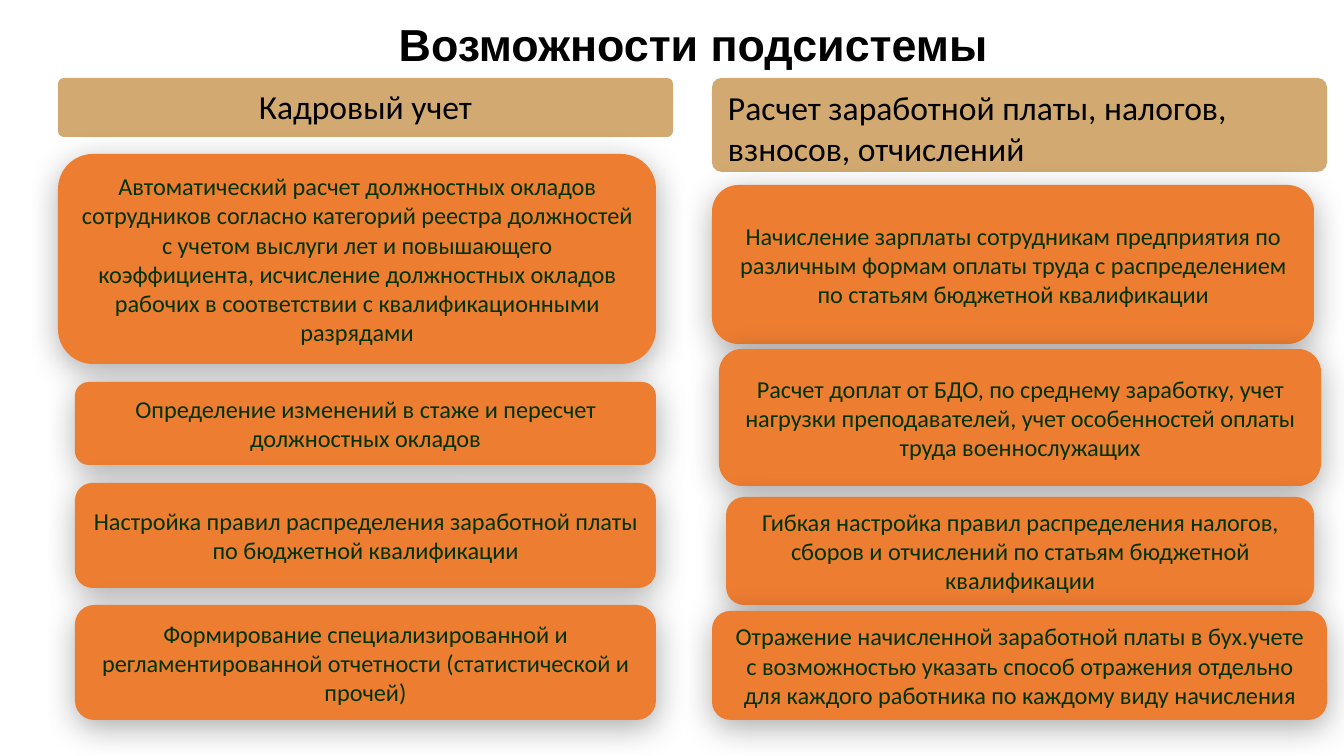
from lxml import etree
from pptx import Presentation
from pptx import util as u
from pptx.dml.color import RGBColor
from pptx.enum import shapes, text
from pptx.oxml.ns import qn

PX = u.Inches(10) / 1344
BLACK = RGBColor(0x00, 0x00, 0x00)
SAND = RGBColor(0xD2, 0xAA, 0x71)
ORANGE = RGBColor(0xED, 0x7D, 0x31)
DARK_GREEN = RGBColor(0x00, 0x33, 0x00)

HEADER_TOP, HEADER_WIDTH = 78, 615
HEADERS = [
    (58, 59, text.PP_ALIGN.CENTER, "Кадровый учет"),
    (712, 94, text.PP_ALIGN.LEFT,
     "Расчет заработной платы, налогов, взносов, отчислений"),
]
FEATURES = [
    (58, 154, 598, 210,
     "Автоматический расчет должностных окладов сотрудников согласно "
     "категорий реестра должностей с учетом выслуги лет и повышающего\v"
     "коэффициента, исчисление должностных окладов рабочих в соответствии "
     "с квалификационными разрядами"),
    (75, 382, 581, 83,
     "Определение изменений в стаже и пересчет должностных окладов"),
    (75, 483, 581, 105,
     "Настройка правил распределения заработной платы по бюджетной "
     "квалификации"),
    (75, 605, 581, 115,
     "Формирование специализированной и регламентированной отчетности "
     "(статистической и прочей)"),
    (712, 185, 602, 159,
     "Начисление зарплаты сотрудникам предприятия по различным формам "
     "оплаты труда с распределением по статьям бюджетной квалификации"),
    (719, 349, 602, 137,
     "Расчет доплат от БДО, по среднему заработку, учет нагрузки "
     "преподавателей, учет особенностей оплаты труда военнослужащих"),
    (726, 497, 588, 108,
     "Гибкая настройка правил распределения налогов, сборов и отчислений "
     "по статьям бюджетной квалификации"),
    (712, 611, 615, 109,
     "Отражение начисленной заработной платы в бух.учете с возможностью "
     "указать способ отражения отдельно для каждого работника по каждому "
     "виду начисления"),
]


def px(*lengths):
    """Turn pixel lengths into EMU."""
    return [round(length * PX) for length in lengths]


def write(shape, wording, size, color, align, anchor, font="Calibri", bold=False):
    """Put one formatted paragraph into a shape."""
    frame = shape.text_frame
    frame.text = wording
    frame.word_wrap = True
    frame.auto_size = text.MSO_AUTO_SIZE.NONE
    frame.vertical_anchor = anchor
    paragraph = frame.paragraphs[0]
    paragraph.alignment = align
    for run in paragraph.runs:
        run.font.name = font
        run.font.size = u.Pt(size)
        run.font.bold = bold
        run.font.color.rgb = color
    return paragraph


def add_card(slide, box, fill):
    """Add a borderless rounded rectangle without a shadow."""
    card = slide.shapes.add_shape(shapes.MSO_SHAPE.ROUNDED_RECTANGLE, *px(*box))
    card.shadow.inherit = False
    card.fill.solid()
    card.fill.fore_color.rgb = fill
    card.line.fill.background()
    return card


def add_soft_shadow(card):
    """Give a card a blurred black shadow below it."""
    effects = card._element.spPr.find(qn("a:effectLst"))
    shadow = etree.SubElement(
        effects, qn("a:outerShdw"), blurRad=str(u.Pt(17.8)), dist=str(u.Pt(4)),
        dir=str(87 * 60000), algn="ctr", rotWithShape="0")
    black = etree.SubElement(shadow, qn("a:srgbClr"), val=str(BLACK))
    etree.SubElement(black, qn("a:alpha"), val="33000")


def add_title(slide, wording):
    """Place and format the slide title."""
    title = slide.shapes.title
    title.left, title.top, title.width, title.height = px(152, 15, 1082, 63)
    paragraph = write(title, wording, 24, BLACK, text.PP_ALIGN.CENTER,
                      text.MSO_ANCHOR.MIDDLE, "Arial", True)
    paragraph.line_spacing = 0.9


def add_header(slide, left, height, align, wording):
    """Add the heading of a column."""
    header = add_card(slide, (left, HEADER_TOP, HEADER_WIDTH, height), SAND)
    header.adjustments[0] = 0.1
    write(header, wording, 18, BLACK, align, text.MSO_ANCHOR.TOP)


def add_feature(slide, left, top, width, height, wording):
    """Add a shadowed card describing one feature."""
    feature = add_card(slide, (left, top, width, height), ORANGE)
    add_soft_shadow(feature)
    write(feature, wording, 13, DARK_GREEN, text.PP_ALIGN.CENTER,
          text.MSO_ANCHOR.MIDDLE)


def main():
    """Build the slide and save it."""
    deck = Presentation()
    deck.slide_width, deck.slide_height = px(1344, 756)
    slide = deck.slides.add_slide(deck.slide_layouts[5])
    add_title(slide, "Возможности подсистемы")
    for header in HEADERS:
        add_header(slide, *header)
    for feature in FEATURES:
        add_feature(slide, *feature)
    deck.save("out.pptx")


if __name__ == "__main__":
    main()
